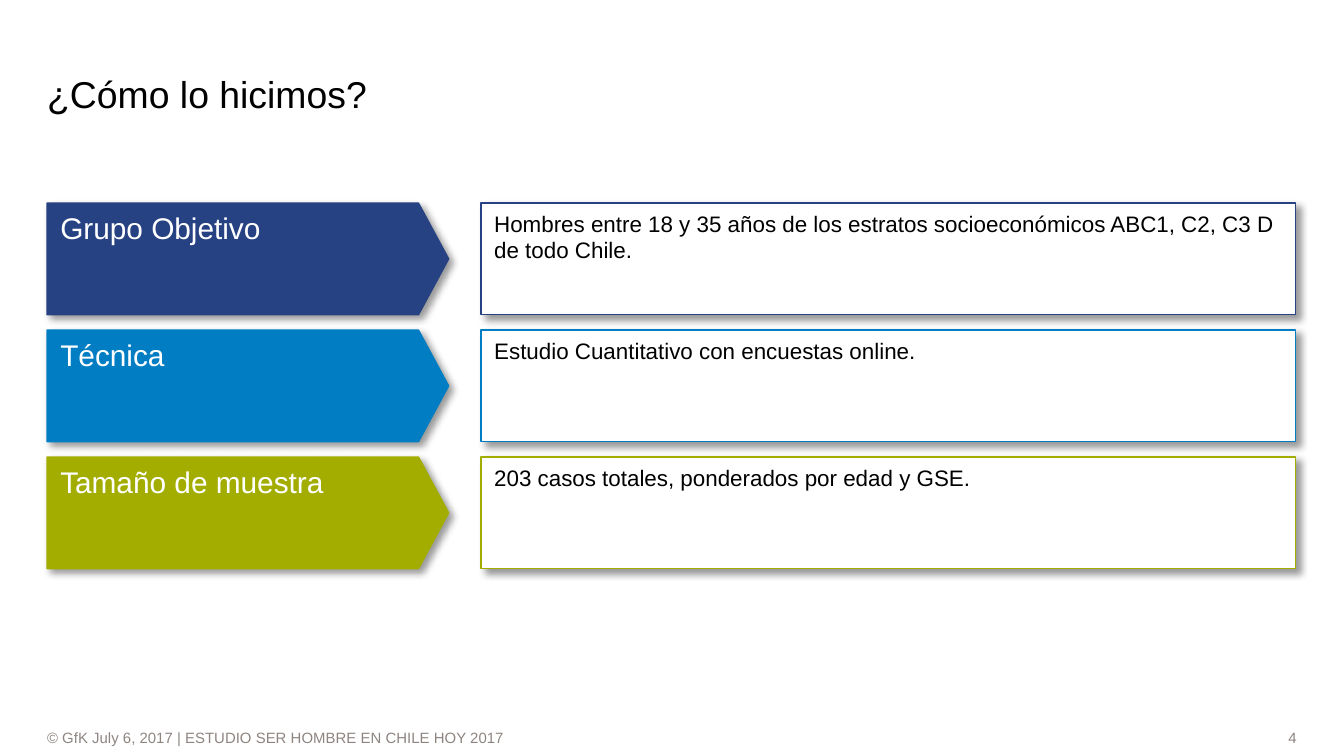
import pptx
import pptx.util
import pptx.dml.color
import pptx.enum.shapes
import pptx.enum.text
import pptx.oxml
import pptx.oxml.ns
from pptx.util import Cm

SHAPES = pptx.enum.shapes.MSO_SHAPE
ALIGN = pptx.enum.text.PP_ALIGN
ANCHOR = pptx.enum.text.MSO_ANCHOR

LEFT = 0.89
FIRST_TOP, ROW_PITCH, ROW_HEIGHT = 3.84, 2.4, 2.11
ARROW_WIDTH, DETAIL_LEFT, DETAIL_WIDTH = 7.59, 9.09, 15.39
ROWS = [
    ("Grupo Objetivo",
     "Hombres entre 18 y 35 años de los estratos socioeconómicos ABC1, C2, C3 D de todo Chile.",
     "264283"),
    ("Técnica", "Estudio Cuantitativo con encuestas online.", "007DC3"),
    ("Tamaño de muestra", "203 casos totales, ponderados por edad y GSE.", "A2AD00"),
]


def color(hex_code):
    """Return the RGB colour for a hex string."""
    return pptx.dml.color.RGBColor.from_string(hex_code)


def write(frame, text, size, hex_code, align=ALIGN.LEFT, anchor=ANCHOR.TOP):
    """Fill a text frame with one formatted paragraph."""
    frame.text = text
    frame.word_wrap = True
    frame.auto_size = pptx.enum.text.MSO_AUTO_SIZE.NONE
    frame.vertical_anchor = anchor
    paragraph = frame.paragraphs[0]
    paragraph.alignment = align
    font = paragraph.runs[0].font
    font.name = "Arial"
    font.size = pptx.util.Pt(size)
    font.color.rgb = color(hex_code)


def clear_margins(frame):
    """Remove the inner margins of a text frame."""
    frame.margin_left = frame.margin_right = frame.margin_top = frame.margin_bottom = 0


def add_shadow(shape):
    """Give a shape a soft shadow towards the lower right."""
    shape.shadow.inherit = False
    effects = shape._element.spPr.find(pptx.oxml.ns.qn("a:effectLst"))
    effects.append(pptx.oxml.parse_xml(
        f'<a:outerShdw {pptx.oxml.ns.nsdecls("a")} blurRad="50800" dist="38100" '
        'dir="2700000" algn="tl" rotWithShape="0"><a:srgbClr val="000000">'
        '<a:alpha val="40000"/></a:srgbClr></a:outerShdw>'))


def add_panel(slide, kind, left, top, width, fill, line):
    """Add one filled, outlined and shadowed shape of a row."""
    panel = slide.shapes.add_shape(kind, Cm(left), Cm(top), Cm(width), Cm(ROW_HEIGHT))
    panel.fill.solid()
    panel.fill.fore_color.rgb = color(fill)
    panel.line.color.rgb = color(line)
    panel.line.width = pptx.util.Pt(0.75)
    add_shadow(panel)
    return panel


def add_row(slide, top, topic, detail, accent):
    """Add a topic arrow with its detail box."""
    detail_box = add_panel(slide, SHAPES.RECTANGLE, DETAIL_LEFT, top, DETAIL_WIDTH, "FFFFFF", accent)
    write(detail_box.text_frame, detail, 12, "000000")
    arrow = add_panel(slide, SHAPES.PENTAGON, LEFT, top, ARROW_WIDTH, accent, accent)
    arrow.adjustments[0] = 0.27
    write(arrow.text_frame, topic, 16, "FFFFFF")


def add_footer(slide, left, width, text, align):
    """Add a small grey text at the bottom of the slide."""
    footer = slide.shapes.add_textbox(Cm(left), Cm(13.74), Cm(width), Cm(0.41))
    clear_margins(footer.text_frame)
    write(footer.text_frame, text, 8, "8E8581", align, ANCHOR.MIDDLE)


def place_title(slide, text):
    """Move the title placeholder and format its text."""
    title = slide.shapes.title
    title.left, title.top, title.width, title.height = Cm(LEFT), Cm(0.99), Cm(17.8), Cm(1.2)
    clear_margins(title.text_frame)
    write(title.text_frame, text, 20, "000000", anchor=ANCHOR.BOTTOM)


def main():
    """Build the slide and save it."""
    presentation = pptx.Presentation()
    presentation.slide_width, presentation.slide_height = Cm(25.4), Cm(14.29)
    slide = presentation.slides.add_slide(presentation.slide_layouts[5])
    place_title(slide, "¿Cómo lo hicimos?")
    for index, row in enumerate(ROWS):
        add_row(slide, FIRST_TOP + index * ROW_PITCH, *row)
    add_footer(slide, LEFT, 19.61, "© GfK July 6, 2017 | ESTUDIO SER HOMBRE EN CHILE HOY 2017", ALIGN.LEFT)
    add_footer(slide, 20.9, 3.61, "4", ALIGN.RIGHT)
    presentation.save("out.pptx")


if __name__ == "__main__":
    main()
